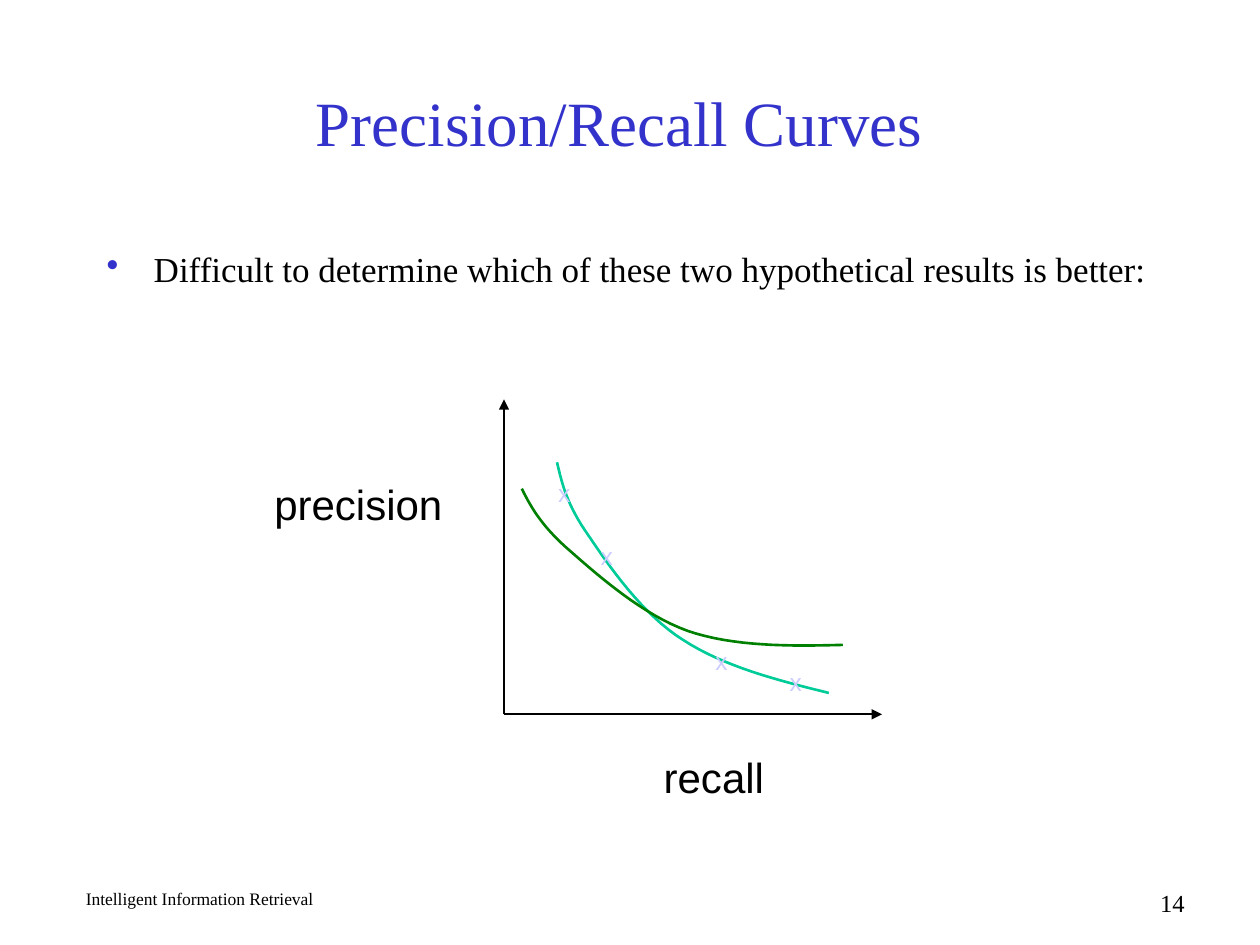
from lxml import etree
from pptx import Presentation
from pptx.dml.color import RGBColor
from pptx.enum.shapes import MSO_CONNECTOR
from pptx.enum.text import MSO_ANCHOR, PP_ALIGN
from pptx.oxml.ns import qn
from pptx.util import Cm, Pt

BLACK = RGBColor(0x00, 0x00, 0x00)
BLUE = RGBColor(0x33, 0x33, 0xCC)
TEAL = RGBColor(0x00, 0xCC, 0x99)
GREEN = RGBColor(0x00, 0x80, 0x00)
LILAC = RGBColor(0xCC, 0xCC, 0xFF)
SERIF, SANS = "Times New Roman", "Arial"
LEFT, CENTER, RIGHT = PP_ALIGN.LEFT, PP_ALIGN.CENTER, PP_ALIGN.RIGHT
TOP, MIDDLE = MSO_ANCHOR.TOP, MSO_ANCHOR.MIDDLE
STRAIGHT = MSO_CONNECTOR.STRAIGHT
STEPS = 16  # line pieces per Bezier segment

# Bezier points in cm from the top left corner of the plot:
# a start, then two controls and an end for each segment
TEAL_CURVE = [(1.07, 1.27), (1.17, 1.7), (1.27, 2.13), (1.7, 2.74),
              (2.11, 3.35), (2.79, 4.34), (3.61, 4.85),
              (4.42, 5.38), (5.49, 5.66), (6.55, 5.92)]
GREEN_CURVE = [(0.36, 1.8), (0.56, 2.21), (0.79, 2.59), (1.35, 3.07),
               (1.91, 3.56), (2.79, 4.34), (3.71, 4.67),
               (4.62, 4.98), (5.74, 4.98), (6.83, 4.95)]
MARKS = [(4.01, 4.85), (0.84, 1.47), (1.7, 2.74), (5.51, 5.28)]


def add_text(s, box, text, size, color=BLACK, font=SERIF, align=LEFT,
             anchor=TOP, wrap=True):
    sp = s.shapes.add_textbox(*(Cm(v) for v in box))
    tf = sp.text_frame
    tf.word_wrap = wrap
    tf.vertical_anchor = anchor
    p = tf.paragraphs[0]
    p.text = text
    p.alignment = align
    p.font.size = Pt(size)
    p.font.name = font
    p.font.color.rgb = color
    return p


def add_bullet(s, box, text):
    p = add_text(s, box, text, 20)
    p.space_before = Pt(4)
    pPr = p._p.get_or_add_pPr()
    pPr.set("marL", str(Cm(0.95)))
    pPr.set("indent", str(-Cm(0.95)))
    bu_clr = etree.Element(qn("a:buClr"))
    etree.SubElement(bu_clr, qn("a:srgbClr"), val=str(BLUE))
    bu_char = etree.Element(qn("a:buChar"), char="•")
    # bullet settings belong between the spacing and the font
    at = pPr.index(pPr.find(qn("a:spcBef"))) + 1
    pPr.insert(at, bu_clr)
    pPr.insert(at + 1, bu_char)


def add_axis(s, x1, y1, x2, y2):
    line = s.shapes.add_connector(STRAIGHT, Cm(x1), Cm(y1), Cm(x2), Cm(y2))
    line.line.color.rgb = BLACK
    line.line.width = Pt(1)
    etree.SubElement(line.line._get_or_add_ln(), qn("a:tailEnd"), type="triangle")
    etree.SubElement(line._element.spPr, qn("a:effectLst"))


def bezier_points(points):
    for i in range(0, len(points) - 1, 3):
        for step in range(1, STEPS + 1):
            t = step / STEPS
            weights = ((1 - t) ** 3, 3 * t * (1 - t) ** 2, 3 * t * t * (1 - t), t ** 3)
            yield tuple(sum(w * pt[axis] for w, pt in zip(weights, points[i:i + 4]))
                        for axis in (0, 1))


def add_curve(s, x, y, points, color):
    def place(pt):
        return Cm(x + pt[0]), Cm(y + pt[1])

    builder = s.shapes.build_freeform(*place(points[0]))
    builder.add_line_segments([place(pt) for pt in bezier_points(points)], close=False)
    sp = builder.convert_to_shape()
    sp.shadow.inherit = False
    sp.fill.background()
    sp.line.color.rgb = color
    sp.line.width = Pt(1.5)


def add_plot(s, x, y, w, h):
    # Axes from the origin
    add_axis(s, x, y + h, x, y)
    add_axis(s, x, y + h, x + w, y + h)

    # Curves
    add_curve(s, x, y, TEAL_CURVE, TEAL)
    add_curve(s, x, y, GREEN_CURVE, GREEN)

    # Axis labels
    add_text(s, (x - 4.88, y + 1.47, 3.91, 1.27), "precision", 24, font=SANS, wrap=False)
    add_text(s, (x + 2.97, y + 6.98, 2.54, 1.27), "recall", 24, font=SANS, wrap=False)

    # Measured points
    for dx, dy in MARKS:
        add_text(s, (x + dx, y + dy, 0.76, 0.84), "x", 14, LILAC, SANS, wrap=False)


def add_footer(s, x, y, w, h):
    add_text(s, (x, y, 9.53, h), "Intelligent Information Retrieval", 10)
    add_text(s, (x + w - 5.28, y, 5.28, h), "14", 14, align=RIGHT)


def main():
    prs = Presentation()
    prs.slide_width, prs.slide_height = Cm(25.4), Cm(19.05)
    s = prs.slides.add_slide(prs.slide_layouts[6])
    add_footer(s, 1.48, 17.78, 22.65, 0.64)
    add_text(s, (1.69, 0.85, 21.59, 3.18), "Precision/Recall Curves", 36, BLUE,
             align=CENTER, anchor=MIDDLE)
    add_bullet(s, (1.9, 4.87, 21.59, 11.43),
               "Difficult to determine which of these two hypothetical results is better:")
    add_plot(s, 10.16, 8.05, 7.62, 6.35)
    prs.save("out.pptx")


if __name__ == "__main__":
    main()
